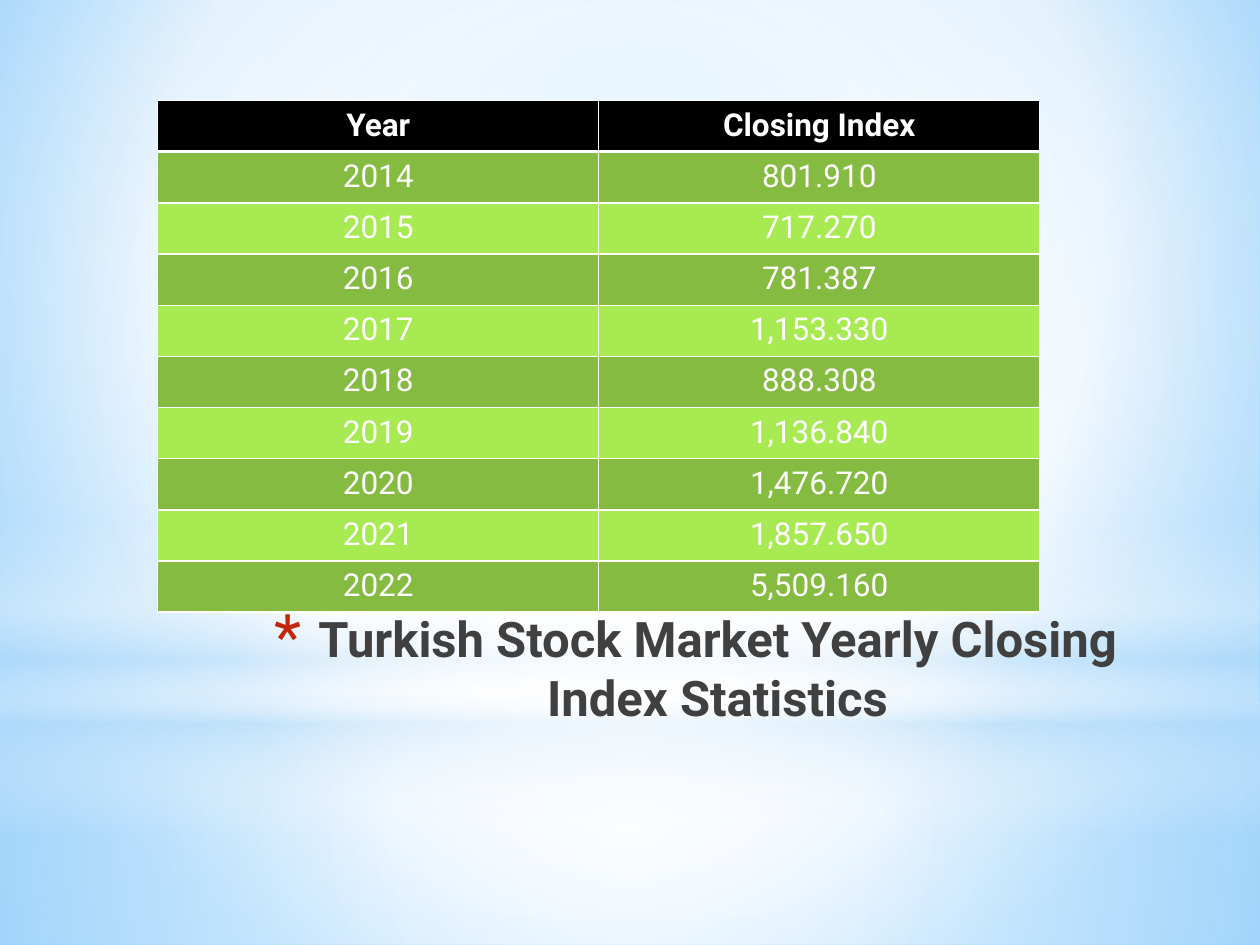
from dataclasses import dataclass

from lxml.etree import SubElement
from pptx import Presentation
from pptx.dml.color import RGBColor
from pptx.enum.shapes import MSO_SHAPE as Shape
from pptx.enum.text import MSO_ANCHOR as Anchor, PP_ALIGN as Align
from pptx.oxml.ns import qn
from pptx.util import Cm, Pt


@dataclass(frozen=True)
class Theme:
    font: str = "Roboto"
    title_size: int = 28
    table_size: int = 18
    title: str = "404040"
    bullet: str = "C3260C"
    white: str = "FFFFFF"
    header: str = "000000"
    bands: tuple = ("86BB42", "A7EA52")
    mist: str = "B4DCFA"
    sky: str = "9ED5FF"
    deep_sky: str = "5BB9FF"


THEME = Theme()
CENTER = (50, 50, 50, 50)
CLOSING_INDEX = [
    ("Year", "Closing Index"),
    ("2014", "801.910"),
    ("2015", "717.270"),
    ("2016", "781.387"),
    ("2017", "1,153.330"),
    ("2018", "888.308"),
    ("2019", "1,136.840"),
    ("2020", "1,476.720"),
    ("2021", "1,857.650"),
    ("2022", "5,509.160"),
]


def add_node(parent, tag, **attributes):
    return SubElement(parent, qn(tag), {key: str(value) for key, value in attributes.items()})


def paint_gradient(owner, fill, stops, focus=None):
    """Fill with (position, colour, opacity) stops, circular around focus or top to bottom."""
    fill.solid()
    solid = owner.find(".//" + qn("a:solidFill"))
    gradient = add_node(solid.getparent(), "a:gradFill", rotWithShape=1)
    solid.getparent().replace(solid, gradient)
    stop_list = add_node(gradient, "a:gsLst")
    for position, colour, opacity in stops:
        stop = add_node(stop_list, "a:gs", pos=position * 1000)
        tint = add_node(stop, "a:srgbClr", val=colour)
        if opacity < 100:
            add_node(tint, "a:alpha", val=opacity * 1000)
    if focus:
        circle = add_node(gradient, "a:path", path="circle")
        sides = {side: inset * 1000 for side, inset in zip("ltrb", focus)}
        add_node(circle, "a:fillToRect", **sides)
    else:
        add_node(gradient, "a:lin", ang=90 * 60000, scaled=0)


def add_glow(slide, kind, top, height, stops, focus=CENTER):
    glow = slide.shapes.add_shape(kind, 0, Cm(top), Cm(25.4), Cm(height))
    glow.shadow.inherit = False
    glow.line.fill.background()
    paint_gradient(glow.element.spPr, glow.fill, stops, focus)


def add_backdrop(slide):
    white, mist = THEME.white, THEME.mist
    paint_gradient(slide.element, slide.background.fill,
                   [(0, THEME.sky, 100), (60, white, 100), (100, THEME.deep_sky, 100)],
                   (20, 10, 20, 60))
    add_glow(slide, Shape.RECTANGLE, 14.17, 4.88,
             [(0, white, 91), (37, white, 76), (100, mist, 79)])
    add_glow(slide, Shape.RECTANGLE, 0, 14.17,
             [(0, white, 89), (48, white, 62), (100, mist, 79)])
    add_glow(slide, Shape.RECTANGLE, 10.46, 6.35,
             [(0, white, 0), (29, white, 30), (45, mist, 40),
              (55, white, 26), (65, mist, 60), (100, white, 0)], None)
    add_glow(slide, Shape.OVAL, 4.45, 14.17, [(0, white, 100), (56, white, 0)])


def write(paragraph, text, size, colour, bold):
    paragraph.alignment = Align.CENTER
    run = paragraph.add_run()
    run.text = text
    run.font.name = THEME.font
    run.font.size = Pt(size)
    run.font.bold = bold
    run.font.color.rgb = RGBColor.from_string(colour)


def add_title(slide, text):
    frame = slide.shapes.add_textbox(Cm(4.98), Cm(12.14), Cm(18.08), Cm(3.18)).text_frame
    frame.word_wrap = True
    frame.vertical_anchor = Anchor.TOP
    heading = frame.paragraphs[0]
    write(heading, text, THEME.title_size, THEME.title, True)
    properties = heading._p.get_or_add_pPr()
    properties.set("marL", str(Cm(0.89)))
    properties.set("indent", str(Cm(-0.89)))
    add_node(add_node(properties, "a:buClr"), "a:srgbClr", val=THEME.bullet)
    add_node(properties, "a:buSzPct", val=128000)
    add_node(properties, "a:buFont", typeface=THEME.font)
    add_node(properties, "a:buChar", char="*")


def add_bottom_rule(cell):
    """Draw the line under a cell; borders precede the fill in the cell properties."""
    properties = cell._tc.get_or_add_tcPr()
    rule = add_node(properties, "a:lnB", w=Pt(2))
    properties.insert(0, rule)
    add_node(add_node(rule, "a:solidFill"), "a:srgbClr", val=THEME.white)


def add_index_table(slide, rows):
    table = slide.shapes.add_table(len(rows), len(rows[0]), Cm(3.18), Cm(2.03),
                                   Cm(17.78), Cm(10.31)).table
    for row_index, values in enumerate(rows):
        is_header = row_index == 0
        band = THEME.header if is_header else THEME.bands[(row_index - 1) % 2]
        for column, value in enumerate(values):
            cell = table.cell(row_index, column)
            cell.fill.solid()
            cell.fill.fore_color.rgb = RGBColor.from_string(band)
            write(cell.text_frame.paragraphs[0], value, THEME.table_size, THEME.white, is_header)
            if is_header:
                add_bottom_rule(cell)


def main():
    deck = Presentation()
    deck.slide_width, deck.slide_height = Cm(25.4), Cm(19.05)
    slide = deck.slides.add_slide(deck.slide_layouts[6])
    add_backdrop(slide)
    add_title(slide, "Turkish Stock Market Yearly Closing Index Statistics")
    add_index_table(slide, CLOSING_INDEX)
    deck.save("out.pptx")


if __name__ == "__main__":
    main()
